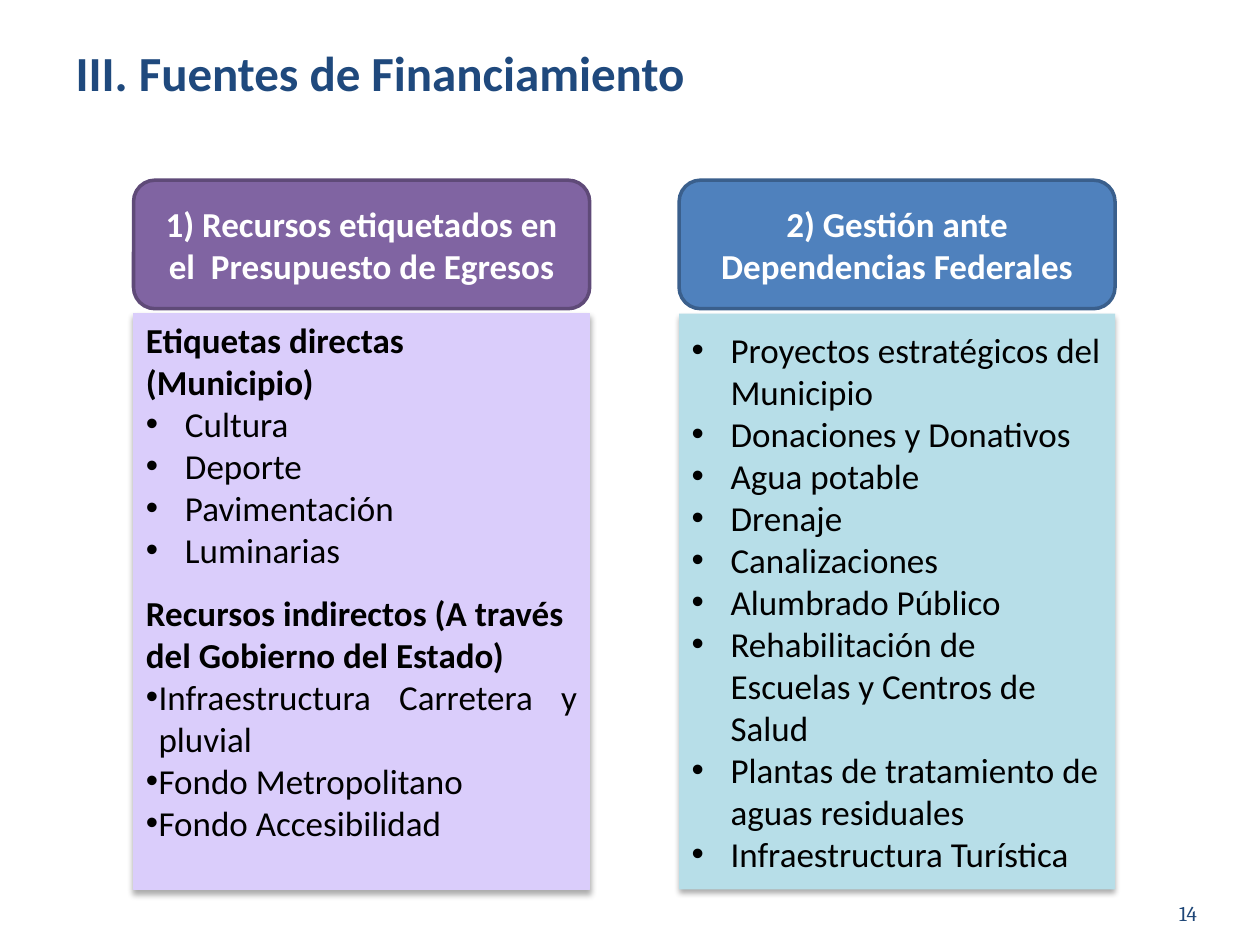
import pptx
import pptx.dml.color
import pptx.enum.shapes
import pptx.enum.text
import pptx.oxml
import pptx.oxml.ns
import pptx.util
from pptx.util import Inches

ALIGN = pptx.enum.text.PP_ALIGN
ANCHOR = pptx.enum.text.MSO_ANCHOR
SHAPE = pptx.enum.shapes.MSO_SHAPE

HEADER_TOP, HEADER_HEIGHT = 1.43, 1.02
BODY_TOP, BODY_HEIGHT = 2.49, 4.57
WIDE, NARROW = 0.31, 0.1  # bullet indents

DIRECT = ["Cultura", "Deporte", "Pavimentación", "Luminarias"]
INDIRECT = ["Infraestructura Carretera y pluvial", "Fondo Metropolitano", "Fondo Accesibilidad"]
FEDERAL = [
    "Proyectos estratégicos del Municipio",
    "Donaciones y Donativos",
    "Agua potable",
    "Drenaje",
    "Canalizaciones",
    "Alumbrado Público",
    "Rehabilitación de Escuelas y Centros de Salud",
    "Plantas de tratamiento de aguas residuales",
    "Infraestructura Turística",
]


def rgb(color):
    return pptx.dml.color.RGBColor.from_string(color)


def add_bullet(p, indent):
    pPr = p._p.get_or_add_pPr()
    pPr.set("marL", str(Inches(indent)))
    pPr.set("indent", str(-Inches(indent)))
    ns = pptx.oxml.ns.nsdecls("a")
    pPr.append(pptx.oxml.parse_xml(f'<a:buFont {ns} typeface="Arial"/>'))
    pPr.append(pptx.oxml.parse_xml(f'<a:buChar {ns} char="•"/>'))


def add_text(tf, text, size=20, color="000000", font="Calibri", bold=False,
             align=ALIGN.LEFT, before=0, bullet=None):
    """Fill the frame's empty first paragraph, or add a new one after it."""
    p = tf.paragraphs[-1]
    if p.runs:
        p = tf.add_paragraph()
    p.alignment = align
    p.space_before = pptx.util.Pt(before)
    if bullet is not None:
        add_bullet(p, bullet)
    r = p.add_run()
    r.text = text
    r.font.name = font
    r.font.size = pptx.util.Pt(size)
    r.font.bold = bold
    r.font.color.rgb = rgb(color)


def add_box(slide, kind, left, top, width, height, fill, line=None, line_width=0.75):
    sp = slide.shapes.add_shape(kind, Inches(left), Inches(top), Inches(width), Inches(height))
    sp.shadow.inherit = False
    sp.fill.solid()
    sp.fill.fore_color.rgb = rgb(fill)
    if line:
        sp.line.color.rgb = rgb(line)
        sp.line.width = pptx.util.Pt(line_width)
    else:
        sp.line.fill.background()
    sp.text_frame.word_wrap = True
    sp.text_frame.vertical_anchor = ANCHOR.MIDDLE
    return sp


def add_shadow(sp):
    effects = sp._element.spPr.find(pptx.oxml.ns.qn("a:effectLst"))
    effects.append(pptx.oxml.parse_xml(
        f'<a:outerShdw {pptx.oxml.ns.nsdecls("a")} blurRad="{pptx.util.Pt(3.5)}" '
        f'dist="{pptx.util.Pt(2.2)}" dir="5400000" rotWithShape="0">'
        '<a:srgbClr val="000000"><a:alpha val="32000"/></a:srgbClr></a:outerShdw>'))


def add_column(slide, left, width, heading, header_fill, header_line, body_fill, body_line=None):
    """Draw a header over a shadowed panel and return the panel's text frame."""
    header = add_box(slide, SHAPE.ROUNDED_RECTANGLE, left, HEADER_TOP, width, HEADER_HEIGHT,
                     header_fill, header_line, 2)
    add_text(header.text_frame, heading, color="FFFFFF", bold=True, align=ALIGN.CENTER)
    body = add_box(slide, SHAPE.RECTANGLE, left, BODY_TOP, width, BODY_HEIGHT, body_fill, body_line)
    add_shadow(body)
    return body.text_frame


def add_bullets(tf, items, indent, align=ALIGN.LEFT):
    for item in items:
        add_text(tf, item, bullet=indent, align=align)


def add_title(slide, text):
    title = slide.shapes.title
    title.left, title.top = Inches(0.5), Inches(0.29)
    title.width, title.height = Inches(9), Inches(0.55)
    title.text_frame.vertical_anchor = ANCHOR.TOP
    add_text(title.text_frame, text, size=28, color="1F497D", bold=True, align=ALIGN.JUSTIFY)


def add_page_number(slide, number):
    box = slide.shapes.add_textbox(Inches(8.67), Inches(6.95), Inches(0.83), Inches(0.4))
    tf = box.text_frame
    tf.word_wrap = True
    tf.vertical_anchor = ANCHOR.BOTTOM
    tf.margin_left = tf.margin_right = tf.margin_top = tf.margin_bottom = 0
    add_text(tf, number, size=12, color="1E4677", font="Cambria", align=ALIGN.RIGHT)


def main():
    prs = pptx.Presentation()
    prs.slide_width, prs.slide_height = Inches(10), Inches(7.5)
    slide = prs.slides.add_slide(prs.slide_layouts[5])
    add_title(slide, "III. Fuentes de Financiamiento")

    budget = add_column(slide, 1.06, 3.62, "1) Recursos etiquetados en el  Presupuesto de Egresos",
                        "8064A2", "5F4A78", "DACDFB", "DACDFB")
    budget.margin_bottom = Inches(0.38)
    add_text(budget, "Etiquetas directas (Municipio)", bold=True)
    add_bullets(budget, DIRECT, WIDE)
    add_text(budget, "Recursos indirectos (A través del Gobierno del Estado)", bold=True, before=12)
    add_bullets(budget, INDIRECT, NARROW, ALIGN.JUSTIFY)

    federal = add_column(slide, 5.39, 3.46, "2) Gestión ante Dependencias Federales",
                         "4F81BD", "3A5F8C", "B7DEE8")
    add_bullets(federal, FEDERAL, WIDE)

    add_page_number(slide, "14")
    prs.save("out.pptx")


if __name__ == "__main__":
    main()
